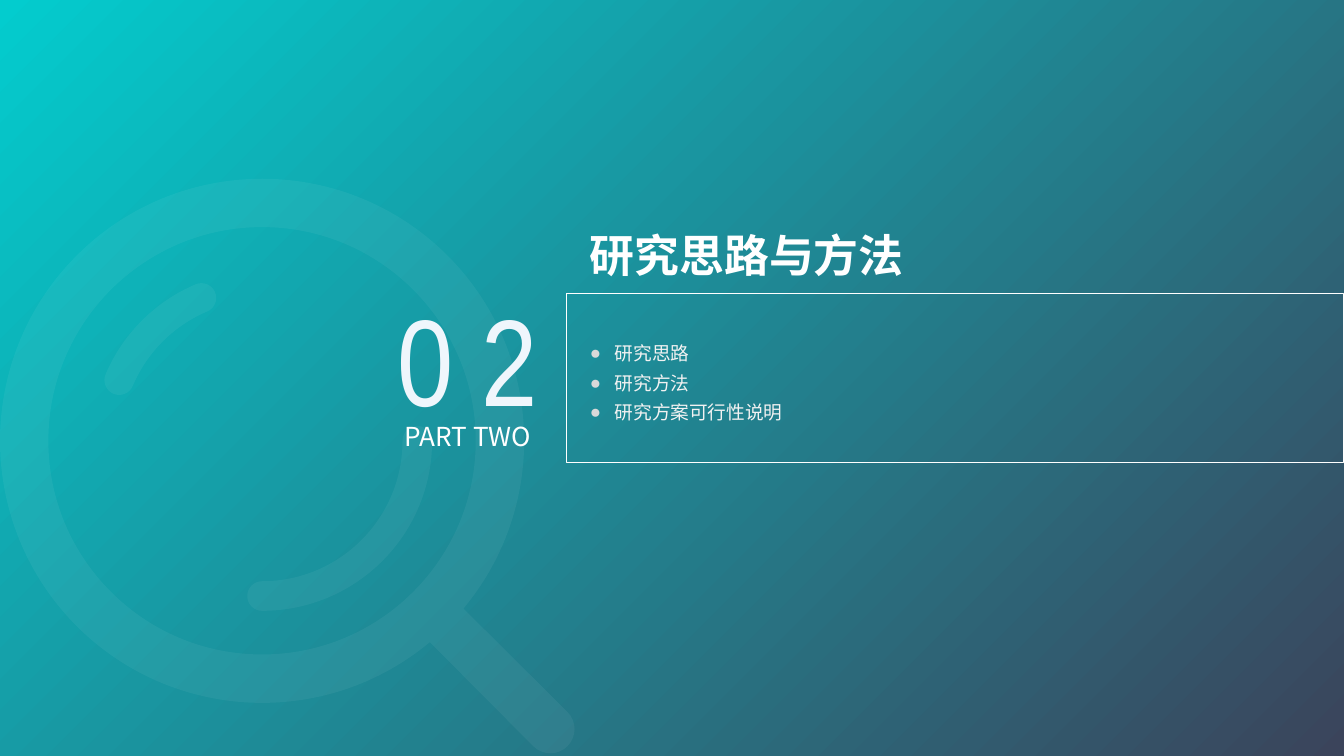
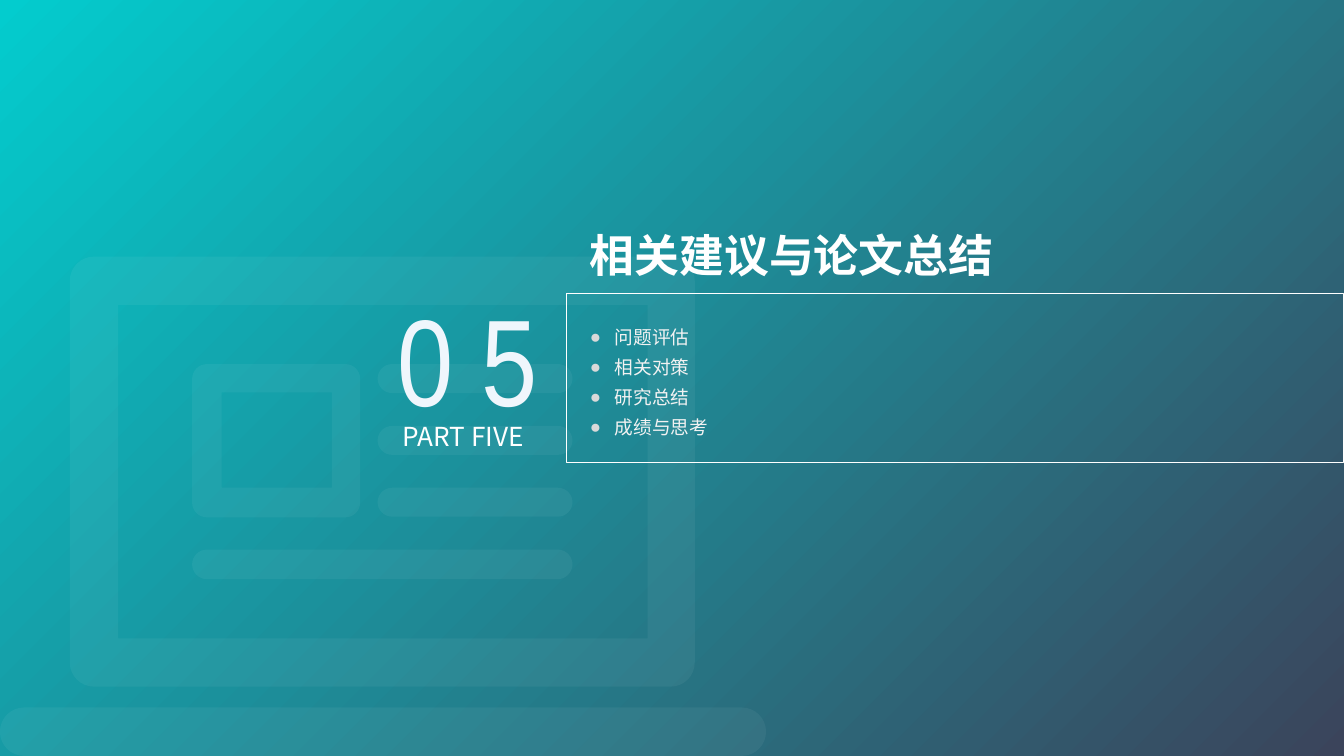
"""Build two section-divider slides with a gradient background and a faint icon."""
from math import ceil, cos, radians, sin, tan

from lxml.etree import SubElement
from pptx import Presentation
from pptx.dml.color import RGBColor
from pptx.enum.shapes import MSO_SHAPE
from pptx.enum.text import MSO_ANCHOR, MSO_AUTO_SIZE, PP_ALIGN
from pptx.oxml.ns import qn
from pptx.util import Inches, Pt

TEAL = RGBColor(0x03, 0xCC, 0xCE)
SLATE = RGBColor(0x3B, 0x44, 0x5B)
WHITE = RGBColor(0xFF, 0xFF, 0xFF)
ICE = RGBColor(0xEF, 0xF6, 0xFC)
PALE = RGBColor(0xF2, 0xF2, 0xF2)
BULLET_GREY = RGBColor(0xD9, 0xD9, 0xD9)
BODY_FONT = "Noto Sans CJK SC"
NUMBER_FONT = "Arial Narrow"

presentation = Presentation()
presentation.slide_width = Inches(10)
presentation.slide_height = Inches(5.625)
CELL = presentation.slide_width // 100
INDENT = round(1.87 * CELL)


def arc(x, y, radius, start, end):
    """Return a start point and cubic curves along a circular arc, in cells and degrees."""
    count = ceil(abs(end - start) / 90)
    step = radians(end - start) / count
    pull = radius * 4 / 3 * tan(step / 4)
    commands = [((x + radius * cos(radians(start)), y + radius * sin(radians(start))),)]
    for index in range(count):
        first = radians(start) + index * step
        last = first + step
        x1, y1 = x + radius * cos(first), y + radius * sin(first)
        x2, y2 = x + radius * cos(last), y + radius * sin(last)
        commands.append((
            (x1 - pull * sin(first), y1 + pull * cos(first)),
            (x2 + pull * sin(last), y2 - pull * cos(last)),
            (x2, y2),
        ))
    return commands


def write(shape, lines, size, color, font_name=BODY_FONT, bold=False, align=PP_ALIGN.LEFT, bullets=False):
    """Fill a shape with one paragraph per line in a single style."""
    frame = shape.text_frame
    for index, line in enumerate(lines):
        paragraph = frame.paragraphs[0] if index == 0 else frame.add_paragraph()
        paragraph.text = line
        paragraph.alignment = align
        if bullets:
            properties = paragraph._p.get_or_add_pPr()
            properties.set("marL", str(INDENT))
            properties.set("indent", str(-INDENT))
            bullet_color = SubElement(properties, qn("a:buClr"))
            SubElement(bullet_color, qn("a:srgbClr"), val=str(BULLET_GREY))
            SubElement(properties, qn("a:buFont"), typeface="Arial")
            SubElement(properties, qn("a:buChar"), char="●")
            paragraph.line_spacing = Pt(16)
        font = paragraph.font
        font.size = Pt(size)
        font.bold = bold
        font.color.rgb = color
        font.name = font_name
        SubElement(font._element, qn("a:ea"), typeface=font_name)


LENS = (19.5, 32.8)
magnifier = [
    arc(*LENS, 19.5, 50.2, 399.8) + arc(40.95, 54.25, 1.8, -45, 135),
    arc(*LENS, 15.9, 360, 0),
]
for start, end in [(203, 247), (0, 90)]:
    first_cap, last_cap = [
        (LENS[0] + 11.55 * cos(radians(angle)), LENS[1] + 11.55 * sin(radians(angle)))
        for angle in (start, end)
    ]
    magnifier.append(
        arc(*LENS, 12.65, start, end)
        + arc(*last_cap, 1.1, end, end + 180)[1:]
        + arc(*LENS, 10.45, end, start)[1:]
        + arc(*first_cap, 1.1, start + 180, start + 360)[1:]
    )

laptop_parts = [
    (5.2, 19.1, 51.7, 51.1, 1.8),
    (8.8, 22.7, 48.2, 47.5, 0),
    (14.3, 27.1, 26.8, 38.5, 1.1),
    (16.5, 29.2, 24.7, 36.3, 0),
    (14.3, 40.9, 42.6, 43.1, 1.1),
    (0, 52.65, 57, 56.25, 1.8),
]
laptop_parts += [(28.1, 27.1 + 4.6 * row, 42.6, 29.25 + 4.6 * row, 1.08) for row in range(3)]
laptop = []
for left, top, right, bottom, radius in laptop_parts:
    if radius:
        corners = [
            (right - radius, bottom - radius, 0),
            (left + radius, bottom - radius, 90),
            (left + radius, top + radius, 180),
            (right - radius, top + radius, 270),
        ]
        laptop.append([command for x, y, angle in corners for command in arc(x, y, radius, angle, angle + 90)])
    else:
        laptop.append([((left, top),), ((left, bottom),), ((right, bottom),), ((right, top),)])

sections = [
    ("0 2", 13.3, "PART TWO", 28.2, 13.2, "研究思路与方法",
     ["研究思路", "研究方法", "研究方案可行性说明"], magnifier, (0, 13.3, 42.9, 56.2)),
    ("0 5", 13.6, "PART FIVE ", 28.7, 12, "相关建议与论文总结",
     ["问题评估", "相关对策", "研究总结", "成绩与思考"], laptop, (0, 19.1, 57, 56.25)),
]

for number, number_width, part, part_left, part_width, title, topics, outlines, bounds in sections:
    slide = presentation.slides.add_slide(presentation.slide_layouts[6])
    background = slide.background.fill
    background.gradient()
    background.gradient_angle = 315
    for stop, color in zip(background.gradient_stops, (TEAL, SLATE)):
        stop.color.rgb = color

    left, top, right, bottom = [round(length * CELL) for length in bounds]
    builder = slide.shapes.build_freeform(left, top)
    builder.add_line_segments([(right, top), (right, bottom), (left, bottom)])
    icon = builder.convert_to_shape()
    icon.shadow.inherit = False
    icon.line.fill.background()
    icon.fill.solid()
    icon.fill.fore_color.rgb = WHITE
    icon_color = icon._element.spPr.find(qn("a:solidFill")).find(qn("a:srgbClr"))
    SubElement(icon_color, qn("a:alpha"), val="5000")
    geometry = next(icon._element.iter(qn("a:path")))
    for child in list(geometry):
        geometry.remove(child)
    for outline in outlines:
        for index, points in enumerate(outline):
            tag = "a:moveTo" if index == 0 else "a:lnTo" if len(points) == 1 else "a:cubicBezTo"
            command = SubElement(geometry, qn(tag))
            for x, y in points:
                SubElement(command, qn("a:pt"), x=str(round(x * CELL) - left), y=str(round(y * CELL) - top))
        SubElement(geometry, qn("a:close"))

    frame = slide.shapes.add_shape(
        MSO_SHAPE.RECTANGLE, *[round(length * CELL) for length in (42.14, 21.83, 57.86, 12.6)]
    )
    frame.shadow.inherit = False
    frame.fill.background()
    frame.line.color.rgb = WHITE
    frame.line.width = Pt(0.5)

    heading = slide.shapes.add_shape(
        MSO_SHAPE.ROUNDED_RECTANGLE, *[round(length * CELL) for length in (42.9, 16.34, 40.2, 5.2)]
    )
    heading.adjustments[0] = 0
    heading.shadow.inherit = False
    heading.fill.background()
    heading.line.fill.background()
    heading.text_frame.vertical_anchor = MSO_ANCHOR.MIDDLE
    write(heading, [title], 24, WHITE, bold=True)

    list_width = 3.9 + 1.4 * max(len(topic) for topic in topics)
    list_height = 0.6 + 2.3 * len(topics)
    centered = {"align": PP_ALIGN.CENTER}
    text_boxes = [
        (34.8 - number_width / 2, 20.6, number_width, 12.1, False, [number], 66, ICE,
         {"font_name": NUMBER_FONT, **centered}),
        (42.9, 28.12 - list_height / 2, list_width, list_height, False, topics, 10, PALE, {"bullets": True}),
        (part_left, 30.8, part_width, 3.4, True, [part], 14, WHITE, centered),
    ]
    for left, top, width, height, wrap, lines, size, color, style in text_boxes:
        box = slide.shapes.add_textbox(*[round(length * CELL) for length in (left, top, width, height)])
        box.text_frame.word_wrap = wrap
        box.text_frame.auto_size = MSO_AUTO_SIZE.SHAPE_TO_FIT_TEXT
        write(box, lines, size, color, **style)

presentation.save("out.pptx")
